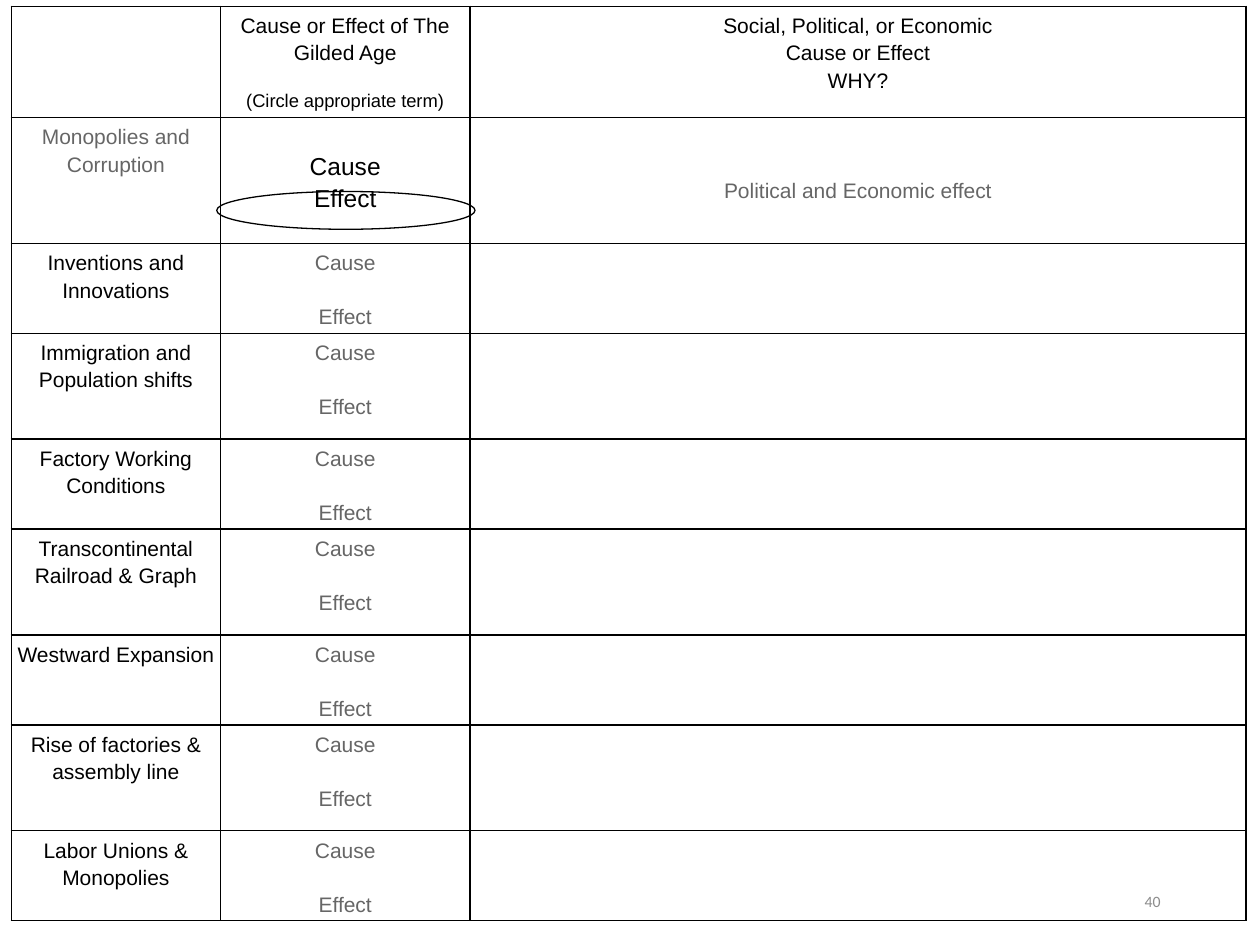
from lxml import etree
from pptx import Presentation, util as u
from pptx.dml.color import RGBColor
from pptx.enum import shapes, text
from pptx.oxml.ns import qn

BLACK = RGBColor(0x00, 0x00, 0x00)
GRAY = RGBColor(0x66, 0x66, 0x66)
PALE_GRAY = RGBColor(0x8C, 0x8C, 0x8C)

LINE_GAP = 15.4
INSET = 0.04
COLUMNS = [1.66, 1.98, 6.16]
ROWS = [0.86, 1.0] + [0.71, 0.84] * 3 + [0.71]
TABLE_LEFT, TABLE_TOP = 0.09, 0.05
TOPICS = [
    "Inventions and Innovations",
    "Immigration and Population shifts",
    "Factory Working Conditions",
    "Transcontinental Railroad & Graph",
    "Westward Expansion",
    "Rise of factories & assembly line",
    "Labor Unions & Monopolies",
]
CHOICES = ["Cause", "Effect"]
HEADER_CHOICE = ["Cause or Effect of The Gilded Age", "(Circle appropriate term)"]
HEADER_WHY = ["Social, Political, or Economic", "Cause or Effect", "WHY?"]
EXAMPLE_TOPIC = ["Monopolies and Corruption"]
EXAMPLE_ANSWER = ["Political and Economic effect"]


def write_lines(cell, lines, color=BLACK, size=12, gap=0, skipped_lines=0):
    """Fill a cell with centred lines, a gap in points apart."""
    cell.margin_top = u.Inches(INSET) + u.Pt(skipped_lines * LINE_GAP)
    frame = cell.text_frame
    frame.text = "\n".join(lines)
    for index, paragraph in enumerate(frame.paragraphs):
        paragraph.alignment = text.PP_ALIGN.CENTER
        paragraph.line_spacing = 1.15
        paragraph.space_before = u.Pt(gap if index else 0)
        paragraph.font.name = "Arial"
        paragraph.font.size = u.Pt(size)
        paragraph.font.color.rgb = color


def format_cell(cell):
    """Clear the fill, set the insets and draw a thin border on each side."""
    cell.margin_left = cell.margin_right = cell.margin_top = u.Inches(INSET)
    cell.margin_bottom = 0
    properties = cell._tc.get_or_add_tcPr()
    for side in ("a:lnL", "a:lnR", "a:lnT", "a:lnB"):
        line = etree.SubElement(properties, qn(side), w=str(u.Pt(1)))
        fill = etree.SubElement(line, qn("a:solidFill"))
        etree.SubElement(fill, qn("a:srgbClr"), val=str(BLACK))
    cell.fill.background()


def add_worksheet(slide):
    """Add the cause and effect table."""
    table = slide.shapes.add_table(
        len(ROWS), len(COLUMNS), u.Inches(TABLE_LEFT), u.Inches(TABLE_TOP),
        u.Inches(sum(COLUMNS)), u.Inches(sum(ROWS))).table
    table.first_row = table.horz_banding = False
    for column, width in zip(table.columns, COLUMNS):
        column.width = u.Inches(width)
    for row, height in zip(table.rows, ROWS):
        row.height = u.Inches(height)
    for cell in table.iter_cells():
        format_cell(cell)

    write_lines(table.cell(0, 1), HEADER_CHOICE, gap=13)
    table.cell(0, 1).text_frame.paragraphs[1].font.size = u.Pt(10.5)
    write_lines(table.cell(0, 2), HEADER_WHY)
    write_lines(table.cell(1, 0), EXAMPLE_TOPIC, GRAY)
    write_lines(table.cell(1, 1), CHOICES, size=14, skipped_lines=1)
    write_lines(table.cell(1, 2), EXAMPLE_ANSWER, GRAY, skipped_lines=2)
    for row, topic in enumerate(TOPICS, start=2):
        write_lines(table.cell(row, 0), [topic])
        write_lines(table.cell(row, 1), CHOICES, GRAY, gap=LINE_GAP)


def add_answer_circle(slide):
    """Circle the answer of the example row."""
    circle = slide.shapes.add_shape(
        shapes.MSO_SHAPE.OVAL, u.Inches(1.72), u.Inches(1.52), u.Inches(2.05), u.Inches(0.3))
    circle.shadow.inherit = False
    circle.fill.background()
    circle.line.color.rgb = BLACK
    circle.line.width = u.Pt(0.75)


def add_page_number(slide):
    """Add the page number at the lower right."""
    box = slide.shapes.add_textbox(u.Inches(7.06), u.Inches(6.95), u.Inches(2.25), u.Inches(0.4))
    frame = box.text_frame
    frame.word_wrap = True
    frame.vertical_anchor = text.MSO_ANCHOR.MIDDLE
    paragraph = frame.paragraphs[0]
    paragraph.text = "40"
    paragraph.alignment = text.PP_ALIGN.RIGHT
    paragraph.font.name = "Calibri"
    paragraph.font.size = u.Pt(9)
    paragraph.font.color.rgb = PALE_GRAY


def main():
    """Build the worksheet slide."""
    presentation = Presentation()
    presentation.slide_width, presentation.slide_height = u.Inches(10), u.Inches(7.5)
    slide = presentation.slides.add_slide(presentation.slide_layouts[6])
    add_page_number(slide)
    add_worksheet(slide)
    add_answer_circle(slide)
    presentation.save("out.pptx")


if __name__ == "__main__":
    main()
